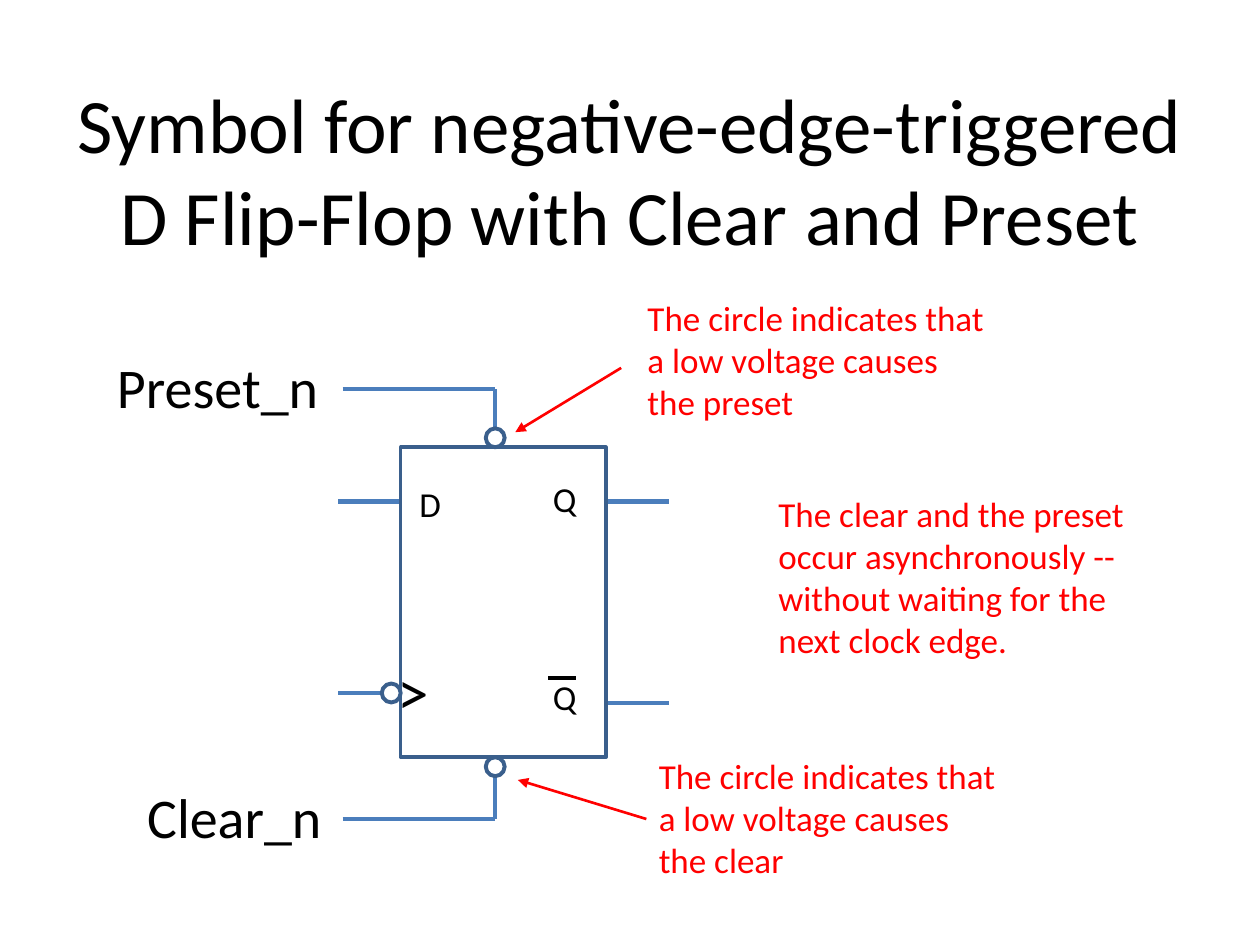
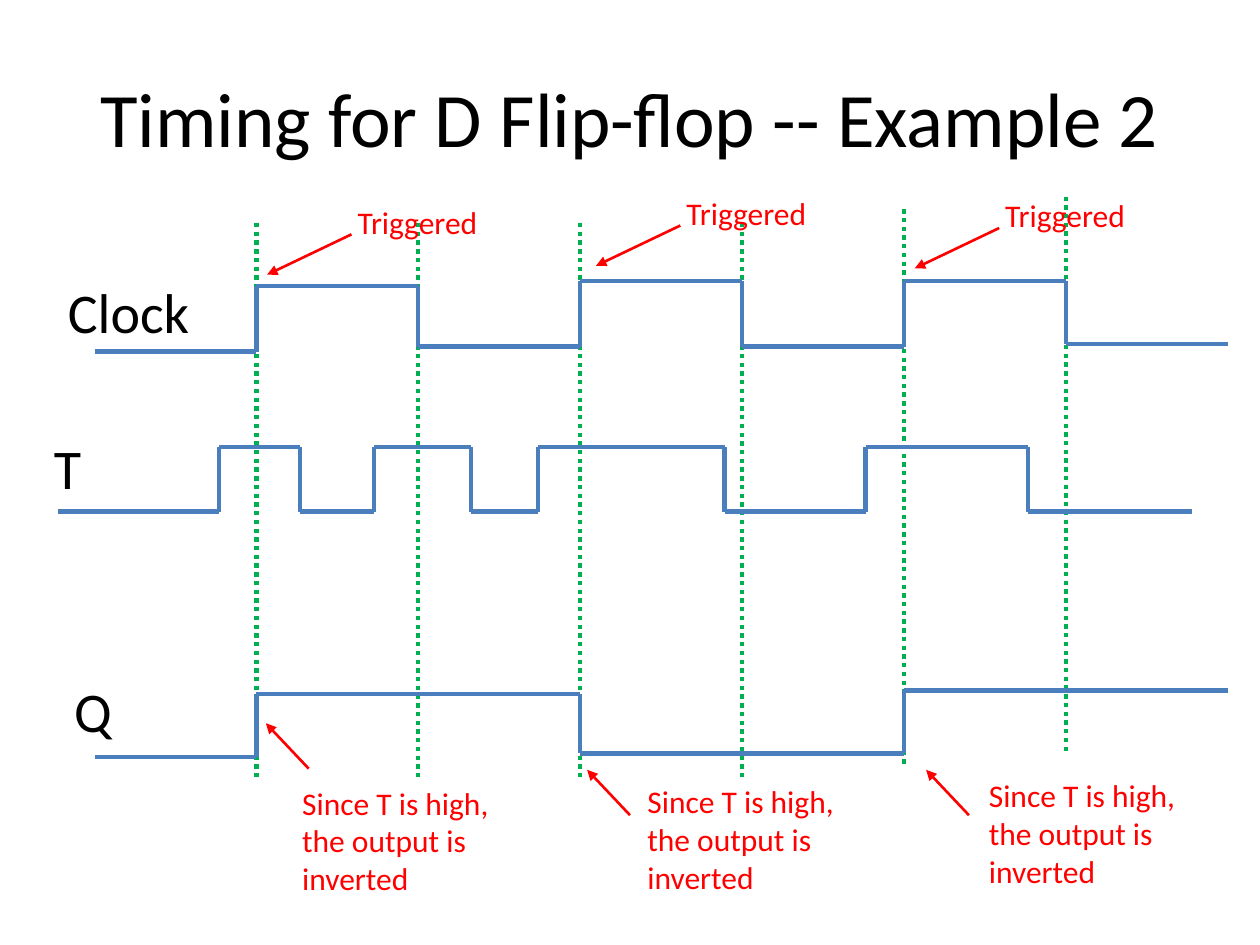
from itertools import pairwise

from lxml import etree
from pptx import Presentation
from pptx import util as u
from pptx.dml.color import RGBColor
from pptx.enum import dml, shapes, text
from pptx.oxml import ns

FONT = "Calibri"
BLACK, WHITE, RED, GREEN = "000000", "FFFFFF", "FF0000", "00B050"
WIRE, OUTLINE = "4B7EBC", "3A5F8C"
WIRE_WIDTH, ARROW_WIDTH = 2.5, 1.5
TITLE_SIZE, SIGNAL_SIZE, PIN_SIZE, NOTE_SIZE = 44, 32, 20, 18
SIGNAL_HEIGHT = 0.64


def draw_line(page, start, end, colour=WIRE, width=WIRE_WIDTH, dotted=False, arrow=False):
    line = page.shapes.add_connector(
        shapes.MSO_CONNECTOR.STRAIGHT, *(u.Inches(value) for value in (*start, *end)))
    line.line.color.rgb = RGBColor.from_string(colour)
    line.line.width = u.Pt(width)
    if dotted:
        line.line.dash_style = dml.MSO_LINE.ROUND_DOT
    if arrow:
        etree.SubElement(line.line._get_or_add_ln(), ns.qn("a:tailEnd"), type="triangle")
    etree.SubElement(line._element.spPr, ns.qn("a:effectLst"))


def write_text(page, place, words, size, colour=BLACK, title=False):
    box = page.shapes.add_textbox(*(u.Inches(value) for value in place))
    frame = box.text_frame
    frame.word_wrap = True
    para = frame.paragraphs[0]
    if title:
        frame.vertical_anchor = text.MSO_ANCHOR.MIDDLE
        para.alignment = text.PP_ALIGN.CENTER
    span = para.add_run()
    span.text = words
    span.font.name = FONT
    span.font.size = u.Pt(size)
    span.font.color.rgb = RGBColor.from_string(colour)


deck = Presentation()
deck.slide_width, deck.slide_height = u.Inches(10), u.Inches(7.5)
blank = deck.slide_layouts[6]

# Slide 1: flip-flop symbol
page = deck.slides.add_slide(blank)
write_text(page, (0.5, 0.3, 9, 2.08),
           "Symbol for negative-edge-triggered D Flip-Flop with Clear and Preset",
           TITLE_SIZE, title=True)

body_left, body_top, body_width, body_height = 3.18, 3.55, 1.63, 2.46
body_right, body_bottom = body_left + body_width, body_top + body_height
bubble = 0.15
control_x = 3.93
control_start = 2.72
pin_length = 0.5
data_y, clock_y, inverse_y = 3.98, 5.5, 5.58

# Pins: the side of the body they touch, the way they point (-1 left, 1 right), the height
for side, direction, y in [
    (body_left, -1, data_y),
    (body_left, -1, clock_y),
    (body_right, 1, data_y),
    (body_right, 1, inverse_y),
]:
    draw_line(page, (side, y), (side + direction * pin_length, y))

# Controls: a level wire that turns at control_x towards its bubble
for words, label_left, label_top, wire_y, bubble_edge in [
    ("Preset_n", 0.83, 2.75, 3.09, body_top - bubble),
    ("Clear_n", 1.07, 6.16, 6.5, body_bottom + bubble),
]:
    write_text(page, (label_left, label_top, 1.85, SIGNAL_HEIGHT), words, SIGNAL_SIZE)
    draw_line(page, (control_start, wire_y), (control_x, wire_y))
    draw_line(page, (control_x, wire_y), (control_x, bubble_edge))

RECTANGLE, OVAL = shapes.MSO_SHAPE.RECTANGLE, shapes.MSO_SHAPE.OVAL
for kind, left, top, width, height, outline_width in [
    (RECTANGLE, body_left, body_top, body_width, body_height, 2),
    (OVAL, body_left - bubble, clock_y - bubble / 2, bubble, bubble, 2.25),
    (OVAL, control_x - bubble / 2, body_top - bubble, bubble, bubble, 2.25),
    (OVAL, control_x - bubble / 2, body_bottom, bubble, bubble, 2.25),
]:
    symbol = page.shapes.add_shape(
        kind, *(u.Inches(value) for value in (left, top, width, height)))
    symbol.shadow.inherit = False
    symbol.fill.solid()
    symbol.fill.fore_color.rgb = RGBColor.from_string(WHITE)
    symbol.line.color.rgb = RGBColor.from_string(OUTLINE)
    symbol.line.width = u.Pt(outline_width)

for words, left, top in [("D", 3.23, 3.78), ("Q", 4.29, 3.74), ("Q", 4.29, 5.31)]:
    write_text(page, (left, top, 0.44, 0.42), words, PIN_SIZE)
write_text(page, (3.06, 5.13, 0.79, 0.71), ">", 36)
draw_line(page, (4.35, 5.38), (4.57, 5.38), BLACK, 2)  # bar over the inverted Q

for action, left, top, arrow_start, arrow_tip in [
    ("preset", 5.04, 2.3, (4.93, 2.92), (4.09, 3.43)),
    ("clear", 5.13, 5.94, (5.13, 6.5), (4.11, 6.19)),
]:
    draw_line(page, arrow_start, arrow_tip, RED, ARROW_WIDTH, arrow=True)
    write_text(page, (left, top, 2.92, 1.11),
               f"The circle indicates that a low voltage causes the {action}", PIN_SIZE, RED)
write_text(page, (6.08, 3.86, 3.17, 1.45),
           "The clear and the preset occur asynchronously -- without waiting for the "
           "next clock edge.", PIN_SIZE, RED)

# Slide 2: timing diagram
page = deck.slides.add_slide(blank)
write_text(page, (0.5, 0.3, 9, 1.25), "Timing for D Flip-flop -- Example 2",
           TITLE_SIZE, title=True)
for words, left, top, width in [("T", 0.33, 3.39, 0.5), ("Clock", 0.44, 2.15, 1.19),
                                ("Q", 0.49, 5.32, 0.5)]:
    write_text(page, (left, top, width, SIGNAL_HEIGHT), words, SIGNAL_SIZE)

# The clock changes every half period; Q changes only on the rising edges
wave_start, period = 0.75, 2.57
clock_times = [wave_start + period / 2 * step for step in range(8)]
clock_edges = clock_times[1:-1]
rising_edges = clock_edges[::2]
toggle_times = [0.46, 1.74, 2.38, 2.97, 3.74, 4.27, 5.75, 6.87, 8.16, 9.46]
output_times = [wave_start, *rising_edges, clock_times[-1]]

# A wave holds one level from each time to the next, starting low
toggle_low, toggle_high = 4.06, 3.55
clock_levels = [2.79, 2.27, 2.75, 2.23, 2.75, 2.23, 2.73]
toggle_levels = [toggle_low, toggle_high] * 4 + [toggle_low]
output_levels = [6.01, 5.51, 5.98, 5.48]

# Dotted guides run down through each clock edge
guide_length = 4.4
for x, top in zip(clock_edges, [1.77, 1.77, 1.77, 1.77, 1.66, 1.56]):
    draw_line(page, (x, top), (x, top + guide_length), GREEN, dotted=True)

for times, levels in [
    (clock_times, clock_levels),
    (toggle_times, toggle_levels),
    (output_times, output_levels),
]:
    for (start, end), level in zip(pairwise(times), levels):
        draw_line(page, (start, level), (end, level))
    for x, (before, after) in zip(times[1:], pairwise(levels)):
        draw_line(page, (x, before), (x, after))

# Each rising edge triggers, and its effect on Q is noted below
for left, top in [(2.74, 1.56), (5.35, 1.49), (7.88, 1.51)]:
    write_text(page, (left, top, 1.24, 0.4), "Triggered", NOTE_SIZE, RED)
    draw_line(page, (left + 0.05, top + 0.3), (left - 0.62, top + 0.62),
              RED, ARROW_WIDTH, arrow=True)
for left, top, tip_x, tip_y in [(2.3, 6.17, 2.11, 5.74), (5.04, 6.16, 4.66, 6.11),
                                (7.75, 6.11, 7.35, 6.11)]:
    write_text(page, (left, top, 1.74, 1.01), "Since T is high, the output is inverted",
               NOTE_SIZE, RED)
    draw_line(page, (tip_x + 0.34, tip_y + 0.36), (tip_x, tip_y), RED, ARROW_WIDTH, arrow=True)

deck.save("out.pptx")
